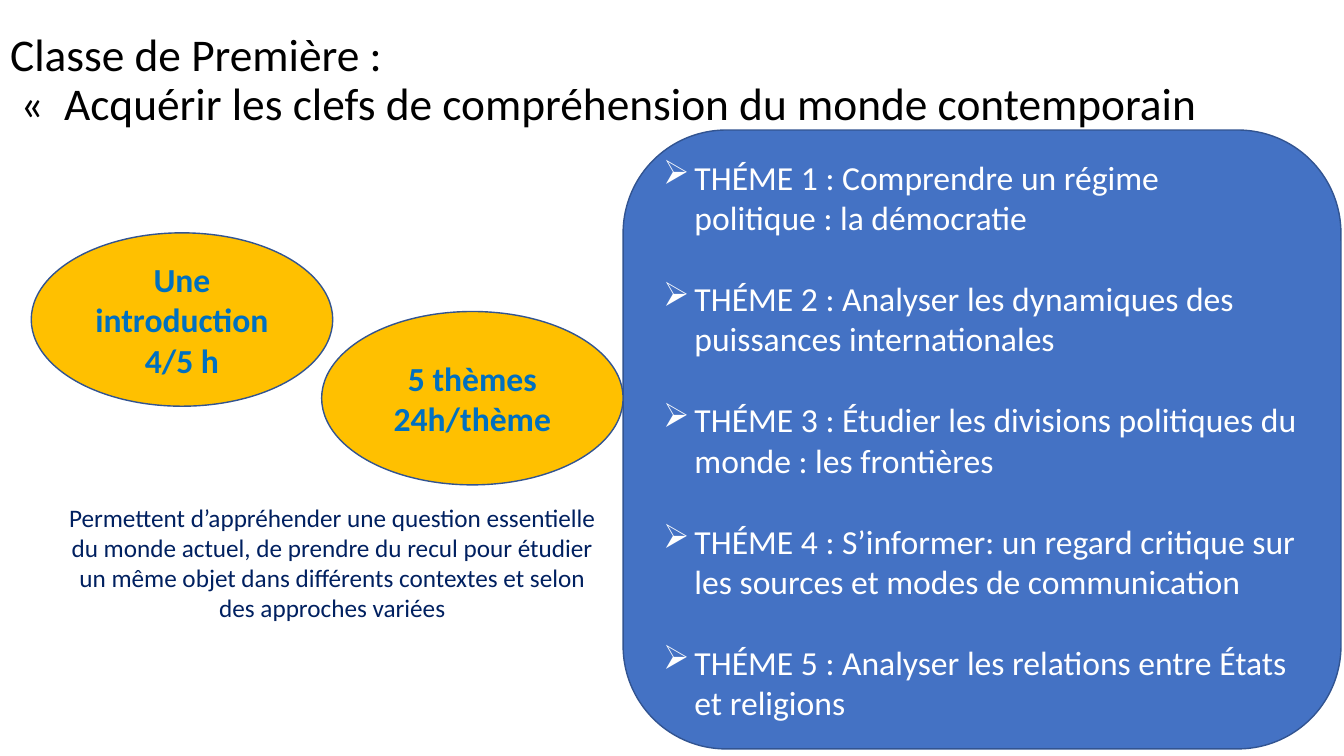
from lxml import etree
from pptx import Presentation
from pptx.dml.color import RGBColor
from pptx.enum.shapes import MSO_SHAPE as Shape
from pptx.enum.text import MSO_ANCHOR as Anchor, MSO_AUTO_SIZE as AutoSize, PP_ALIGN as Align
from pptx.oxml.ns import qn
from pptx.util import Inches, Pt

THEMES = [
    "THÉME 1 : Comprendre un régime politique : la démocratie",
    "THÉME 2 : Analyser les dynamiques des puissances internationales",
    "THÉME 3 : Étudier les divisions politiques du monde : les frontières",
    "THÉME 4 : S’informer: un regard critique sur les sources et modes de communication",
    "THÉME 5 : Analyser les relations entre États et religions",
]
PURPOSE = (
    "Permettent d’appréhender une question essentielle du monde actuel, "
    "de prendre du recul pour étudier un même objet dans différents contextes "
    "et selon des approches variées"
)


def rgb(hex_color):
    return RGBColor.from_string(hex_color)


def add_bullet(paragraph, char, indent):
    """Give the paragraph a bullet with a hanging indent."""
    properties = paragraph._p.get_or_add_pPr()
    properties.set("marL", str(indent))
    properties.set("indent", str(-indent))
    bullet = etree.Element(qn("a:buChar"), char=char)
    properties.insert_element_before(bullet, "a:tabLst", "a:defRPr", "a:extLst")


class CourseSlide:
    FONT = "Calibri"
    OUTLINE = "325491"
    BLUE, GOLD = "4472C4", "FFC000"
    BLACK, WHITE, SKY, NAVY = "000000", "FFFFFF", "0070C0", "002060"

    def __init__(self, presentation):
        self.slide = presentation.slides.add_slide(presentation.slide_layouts[5])

    def set_text(self, frame, lines, size, color, align=Align.CENTER, bold=False,
                 anchor=Anchor.MIDDLE):
        """Fill a text frame, one paragraph per line, and return the paragraphs."""
        frame.word_wrap = True
        frame.vertical_anchor = anchor
        frame.text = "\n".join(lines)
        for paragraph in frame.paragraphs:
            paragraph.alignment = align
            font = paragraph.font
            font.name, font.size, font.bold = self.FONT, Pt(size), bold
            font.color.rgb = rgb(color)
        return frame.paragraphs

    def title(self, text, left, top, width, height):
        title = self.slide.shapes.title
        title.left, title.top = Inches(left), Inches(top)
        title.width, title.height = Inches(width), Inches(height)
        title.text_frame.auto_size = AutoSize.NONE
        for paragraph in self.set_text(title.text_frame, [text], 32.4, self.BLACK, Align.LEFT):
            paragraph.line_spacing = 0.9

    def panel(self, kind, fill, left, top, width, height):
        panel = self.slide.shapes.add_shape(
            kind, Inches(left), Inches(top), Inches(width), Inches(height))
        panel.shadow.inherit = False
        panel.fill.solid()
        panel.fill.fore_color.rgb = rgb(fill)
        panel.line.color.rgb = rgb(self.OUTLINE)
        panel.line.width = Pt(1)
        return panel.text_frame

    def theme_list(self, themes, left, top, width, height):
        frame = self.panel(Shape.ROUNDED_RECTANGLE, self.BLUE, left, top, width, height)
        for index, paragraph in enumerate(self.set_text(frame, themes, 24, self.WHITE, Align.LEFT)):
            add_bullet(paragraph, "➢", Inches(0.31))
            if index:
                paragraph.space_before = Pt(29)

    def duration(self, lines, left, top):
        frame = self.panel(Shape.OVAL, self.GOLD, left, top, 2.99, 1.72)
        self.set_text(frame, lines, 24, self.SKY, bold=True)

    def note(self, text, left, top, width, height):
        note = self.slide.shapes.add_textbox(
            Inches(left), Inches(top), Inches(width), Inches(height))
        self.set_text(note.text_frame, [text], 18, self.NAVY, anchor=Anchor.TOP)
        note.text_frame.auto_size = AutoSize.SHAPE_TO_FIT_TEXT


def main():
    presentation = Presentation()
    presentation.slide_width, presentation.slide_height = Inches(13.33), Inches(7.5)
    course = CourseSlide(presentation)
    course.title(
        "Classe de Première :\v «  Acquérir les clefs de compréhension du monde contemporain",
        0, 0.08, 13.05, 1.45)
    course.theme_list(THEMES, 6.18, 1.29, 7.12, 6.14)
    course.duration(["Une introduction", "4/5 h"], 0.31, 2.31)
    course.duration(["5 thèmes", "24h/thème"], 3.19, 3.09)
    course.note(PURPOSE, 0.5, 4.93, 5.59, 1.31)
    presentation.save("out.pptx")


if __name__ == "__main__":
    main()
